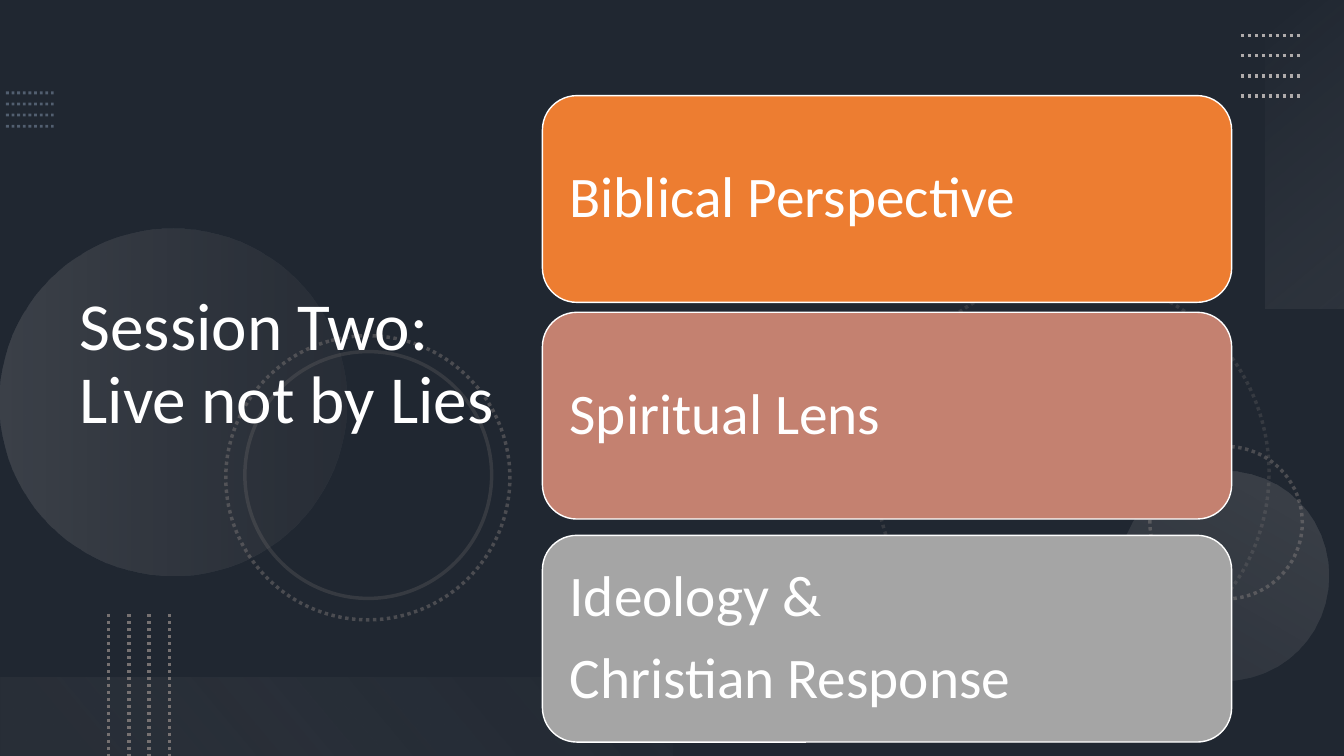
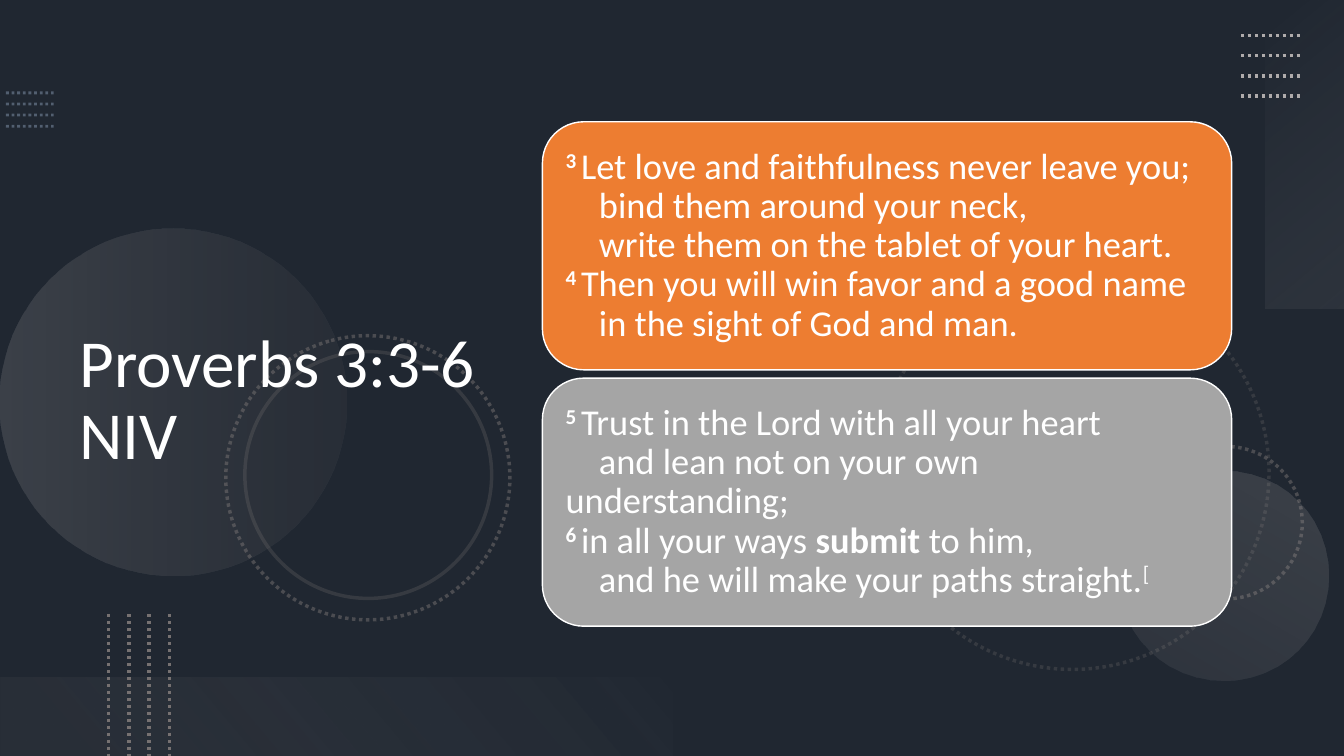
from dataclasses import dataclass

from pptx import Presentation
from pptx.dml.color import RGBColor
from pptx.enum.dml import MSO_LINE
from pptx.enum.shapes import MSO_CONNECTOR, MSO_SHAPE
from pptx.enum.text import MSO_ANCHOR, MSO_AUTO_SIZE, PP_ALIGN
from pptx.oxml.ns import qn
from pptx.util import Cm, Pt

DOTTED = MSO_LINE.ROUND_DOT
STRAIGHT = MSO_CONNECTOR.STRAIGHT
ELLIPSE = MSO_SHAPE.OVAL
RECTANGLE = MSO_SHAPE.RECTANGLE
ROUNDED = MSO_SHAPE.ROUNDED_RECTANGLE
MIDDLE = MSO_ANCHOR.MIDDLE
NO_AUTOFIT = MSO_AUTO_SIZE.NONE
LEFT = PP_ALIGN.LEFT

SLATE = RGBColor(0x44, 0x54, 0x6A)
BLACK = RGBColor(0x00, 0x00, 0x00)
WHITE = RGBColor(0xFF, 0xFF, 0xFF)
STEEL = RGBColor(0x84, 0x97, 0xB0)
DARK_GRAY = RGBColor(0x76, 0x71, 0x71)
LIGHT_GRAY = RGBColor(0xAF, 0xAB, 0xAB)
PALE_GRAY = RGBColor(0xF5, 0xF5, 0xF5)
ORANGE = RGBColor(0xED, 0x7D, 0x31)
ROSE = RGBColor(0xC4, 0x81, 0x70)
GRAY = RGBColor(0xA5, 0xA5, 0xA5)

FONT = "Calibri"
SLIDE_WIDTH, SLIDE_HEIGHT = 33.87, 19.05
TITLE_LEFT, TITLE_TOP, TITLE_WIDTH, TITLE_HEIGHT = 1.75, 1.37, 11.66, 15.67
CARD_LEFT, CARD_WIDTH = 13.67, 17.37
VERSE_INDENT = 0.84


@dataclass(frozen=True)
class DotGrid:
    """Four equal dotted lines; step_x and step_y lead from one to the next."""
    left: float
    top: float
    width: float
    height: float
    step_x: float
    step_y: float
    color: RGBColor
    weight: float = 2.5
    opacity: int = 100


@dataclass(frozen=True)
class Ring:
    left: float
    top: float
    size: float
    rotation: int
    opacity: int
    dotted: bool = True


@dataclass(frozen=True)
class Stop:
    position: float
    color: RGBColor
    opacity: int


@dataclass(frozen=True)
class Glow:
    kind: int
    left: float
    top: float
    width: float
    height: float
    rotation: int
    angle: int
    stops: tuple[Stop, Stop]


@dataclass(frozen=True)
class Span:
    text: str
    bold: bool = False
    raised: bool = False


@dataclass(frozen=True)
class Line:
    spans: tuple[Span, ...]
    indented: bool = False


@dataclass(frozen=True)
class Card:
    top: float
    color: RGBColor
    lines: tuple[Line, ...]


@dataclass(frozen=True)
class CardStyle:
    height: float
    text_size: int
    inset: float
    inset_right: float
    space_after: int


@dataclass(frozen=True)
class Page:
    title: str
    title_shift: float
    style: CardStyle
    cards: tuple[Card, ...]


def plain(text: str, indented: bool = False) -> Line:
    return Line((Span(text),), indented)


def verse(number: str, *spans: Span) -> Line:
    return Line((Span(f"{number} ", bold=True, raised=True), *spans))


DOT_GRIDS = (
    DotGrid(0.15, 2.34, 1.2, 0, 0, 0.28, STEEL, 2, 50),
    DotGrid(31.27, 0.89, 1.52, 0, 0, 0.51, LIGHT_GRAY),
    DotGrid(2.74, 15.47, 0, 3.58, 0.51, 0, DARK_GRAY),
)
RINGS = (
    Ring(22.07, 6.96, 9.91, 75, 25),
    Ring(28.98, 11.25, 3.84, 270, 50),
    Ring(5.69, 8.46, 7.16, 75, 50),
    Ring(6.17, 8.86, 6.22, 75, 25, dotted=False),
)
GLOWS = (
    Glow(ELLIPSE, 0, 5.77, 8.74, 8.74, 270, 90,
         (Stop(0, LIGHT_GRAY, 20), Stop(1, DARK_GRAY, 10))),
    Glow(ELLIPSE, 28.19, 11.86, 5.28, 5.28, 210, 90,
         (Stop(0, LIGHT_GRAY, 10), Stop(1, LIGHT_GRAY, 20))),
    Glow(RECTANGLE, 29.01, 2.9, 7.77, 1.98, 270, 140,
         (Stop(0, PALE_GRAY, 0), Stop(1, LIGHT_GRAY, 10))),
    Glow(RECTANGLE, 0, 17.07, 16.94, 1.98, 180, 140,
         (Stop(0.1, DARK_GRAY, 10), Stop(1, PALE_GRAY, 0))),
)

PAGES = (
    Page("Session Two: Live not by Lies", 0, CardStyle(5.21, 41, 0.43, 0.43, 14), (
        Card(2.41, ORANGE, (plain("Biblical Perspective"),)),
        Card(7.87, ROSE, (plain("Spiritual Lens"),)),
        Card(13.49, GRAY, (plain("Ideology &"), plain("Christian Response"))),
    )),
    Page("Proverbs 3:3-6 NIV", 0.92, CardStyle(6.25, 26, 0.28, 0.5, 0), (
        Card(3.07, ORANGE, (
            verse("3", Span("Let love and faithfulness never leave you;")),
            plain("bind them around your neck,", indented=True),
            plain("write them on the tablet of your heart.", indented=True),
            verse("4", Span("Then you will win favor and a good name")),
            plain("in the sight of God and man.", indented=True),
        )),
        Card(9.53, GRAY, (
            verse("5", Span("Trust in the Lord with all your heart")),
            plain("and lean not on your own understanding;", indented=True),
            verse("6", Span("in all your ways "), Span("submit ", bold=True),
                  Span("to him,")),
            Line((Span("and he will make your paths straight."),
                  Span("[", raised=True)), indented=True),
        )),
    )),
)


def set_opacities(shape, *opacities: int) -> None:
    """Give the shape's colours, in order, their opacity in percent."""
    for color, opacity in zip(shape._element.iter(qn("a:srgbClr")), opacities):
        alpha = color.makeelement(qn("a:alpha"), {"val": str(opacity * 1000)})
        color.append(alpha)


def add_preset(shapes, kind, left: float, top: float, width: float, height: float):
    shape = shapes.add_shape(kind, Cm(left), Cm(top), Cm(width), Cm(height))
    shape.shadow.inherit = False
    return shape


def draw_dot_grid(shapes, grid: DotGrid) -> None:
    for index in range(4):
        left = grid.left + index * grid.step_x
        top = grid.top + index * grid.step_y
        line = shapes.add_connector(STRAIGHT, Cm(left), Cm(top),
                                    Cm(left + grid.width), Cm(top + grid.height))
        line.line.color.rgb = grid.color
        line.line.width = Pt(grid.weight)
        line.line.dash_style = DOTTED
        properties = line._element.spPr
        properties.append(properties.makeelement(qn("a:effectLst"), {}))
        set_opacities(line, grid.opacity)


def draw_ring(shapes, ring: Ring) -> None:
    shape = add_preset(shapes, ELLIPSE, ring.left, ring.top, ring.size, ring.size)
    shape.rotation = ring.rotation
    shape.fill.background()
    shape.line.color.rgb = DARK_GRAY
    shape.line.width = Pt(2.5)
    if ring.dotted:
        shape.line.dash_style = DOTTED
    set_opacities(shape, ring.opacity)


def draw_glow(shapes, glow: Glow) -> None:
    shape = add_preset(shapes, glow.kind, glow.left, glow.top, glow.width, glow.height)
    shape.rotation = glow.rotation
    shape.line.fill.background()
    shape.fill.gradient()
    shape.fill.gradient_angle = 360 - glow.angle
    for gradient_stop, stop in zip(shape.fill.gradient_stops, glow.stops):
        gradient_stop.position = stop.position
        gradient_stop.color.rgb = stop.color
    set_opacities(shape, *(stop.opacity for stop in glow.stops))


def draw_backdrop(shapes) -> None:
    shade = add_preset(shapes, RECTANGLE, 0, 0, SLIDE_WIDTH, SLIDE_HEIGHT)
    shade.fill.solid()
    shade.fill.fore_color.rgb = BLACK
    shade.line.fill.background()
    set_opacities(shade, 53)
    for ring in RINGS:
        draw_ring(shapes, ring)
    for glow in GLOWS:
        draw_glow(shapes, glow)
    for grid in DOT_GRIDS:
        draw_dot_grid(shapes, grid)


def move_to_layout(slide, layout) -> None:
    """Hand the slide's drawn shapes to its layout, so that all slides share them."""
    drawn = [shape for shape in slide.shapes if not shape.is_placeholder]
    for number, shape in enumerate(drawn, start=100):
        shape._element.xpath(".//p:cNvPr")[0].set("id", str(number))
        layout.shapes._spTree.append(shape._element)


def add_span(paragraph, span: Span, size: int) -> None:
    run = paragraph.add_run()
    run.text = span.text
    run.font.name = FONT
    run.font.size = Pt(size)
    run.font.bold = span.bold
    run.font.color.rgb = WHITE
    if span.raised:
        run.font._element.set("baseline", "30000")


def fill_title(title, page: Page) -> None:
    title.left, title.top = Cm(TITLE_LEFT), Cm(TITLE_TOP + page.title_shift)
    title.width, title.height = Cm(TITLE_WIDTH), Cm(TITLE_HEIGHT)
    frame = title.text_frame
    frame.auto_size = NO_AUTOFIT
    frame.word_wrap = True
    frame.vertical_anchor = MIDDLE
    paragraph = frame.paragraphs[0]
    paragraph.alignment = LEFT
    paragraph.line_spacing = 0.9
    add_span(paragraph, Span(page.title), 48)


def draw_card(shapes, card: Card, style: CardStyle) -> None:
    shape = add_preset(shapes, ROUNDED, CARD_LEFT, card.top, CARD_WIDTH, style.height)
    shape.fill.solid()
    shape.fill.fore_color.rgb = card.color
    shape.line.color.rgb = WHITE
    shape.line.width = Pt(1)
    frame = shape.text_frame
    frame.word_wrap = True
    frame.vertical_anchor = MIDDLE
    frame.margin_left = frame.margin_top = frame.margin_bottom = Cm(style.inset)
    frame.margin_right = Cm(style.inset_right)
    for index, line in enumerate(card.lines):
        paragraph = frame.add_paragraph() if index else frame.paragraphs[0]
        paragraph.alignment = LEFT
        paragraph.line_spacing = 0.9
        paragraph.space_after = Pt(style.space_after)
        if line.indented:
            paragraph._p.get_or_add_pPr().set("indent", str(Cm(VERSE_INDENT)))
        for span in line.spans:
            add_span(paragraph, span, style.text_size)


def main() -> None:
    presentation = Presentation()
    presentation.slide_width = Cm(SLIDE_WIDTH)
    presentation.slide_height = Cm(SLIDE_HEIGHT)

    # Shared look, kept in the title-only layout
    layout = presentation.slide_layouts[5]
    layout.background.fill.solid()
    layout.background.fill.fore_color.rgb = SLATE
    slides = [presentation.slides.add_slide(layout) for _ in PAGES]
    draw_backdrop(slides[0].shapes)
    move_to_layout(slides[0], layout)

    # Title and cards of each slide
    for slide, page in zip(slides, PAGES):
        fill_title(slide.shapes.title, page)
        for card in page.cards:
            draw_card(slide.shapes, card, page.style)

    presentation.save("out.pptx")


if __name__ == "__main__":
    main()
